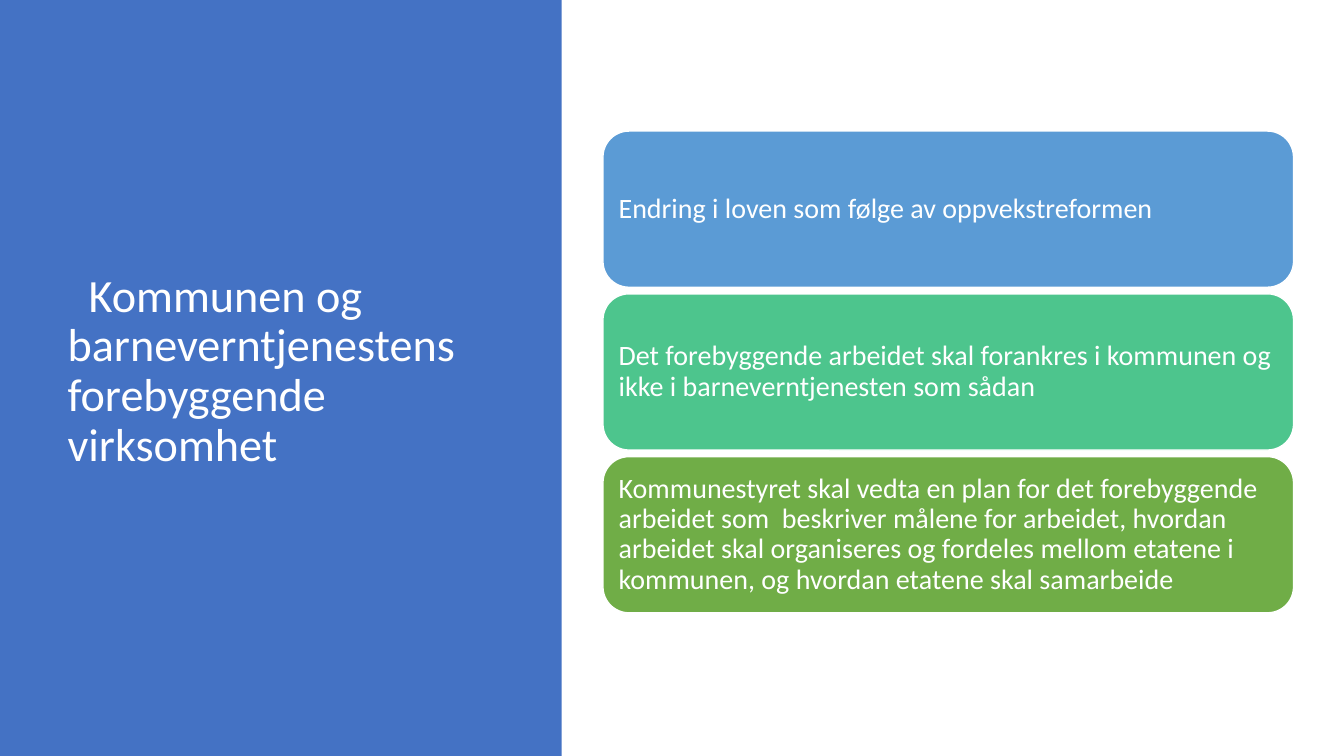
from pptx import Presentation
from pptx.dml.color import RGBColor
from pptx.enum.shapes import MSO_SHAPE
from pptx.enum.text import MSO_ANCHOR, MSO_AUTO_SIZE, PP_ALIGN
from pptx.util import Inches, Pt

WHITE = RGBColor(0xFF, 0xFF, 0xFF)
PANEL_BLUE = RGBColor(0x44, 0x72, 0xC4)
LIGHT_BLUE = RGBColor(0x5B, 0x9B, 0xD5)
TEAL = RGBColor(0x4D, 0xC5, 0x8D)
GREEN = RGBColor(0x70, 0xAD, 0x47)

CARD_LEFT, CARD_TOP = 5.98, 1.3
CARD_WIDTH, CARD_HEIGHT = 6.85, 1.55
CARD_PITCH = 1.615

CARDS = [
    (LIGHT_BLUE, "Endring i loven som følge av oppvekstreformen"),
    (TEAL, "Det forebyggende arbeidet skal forankres i kommunen og "
           "ikke i barneverntjenesten som sådan"),
    (GREEN, "Kommunestyret skal vedta en plan for det forebyggende "
            "arbeidet som  beskriver målene for arbeidet, hvordan "
            "arbeidet skal organiseres og fordeles mellom etatene i "
            "kommunen, og hvordan etatene skal samarbeide"),
]


def write_text(shape, text, size, inset_x, inset_y, indent=0):
    frame = shape.text_frame
    frame.word_wrap = True
    frame.auto_size = MSO_AUTO_SIZE.NONE
    frame.vertical_anchor = MSO_ANCHOR.MIDDLE
    frame.margin_left = frame.margin_right = Inches(inset_x)
    frame.margin_top = frame.margin_bottom = Inches(inset_y)
    paragraph = frame.paragraphs[0]
    paragraph.alignment = PP_ALIGN.LEFT
    paragraph.line_spacing = 0.9
    if indent:
        paragraph._p.get_or_add_pPr().set("indent", str(Inches(indent)))
    run = paragraph.add_run()
    run.text = text
    run.font.name = "Calibri"
    run.font.size = Pt(size)
    run.font.color.rgb = WHITE


prs = Presentation()
prs.slide_width, prs.slide_height = Inches(13.33), Inches(7.5)
slide = prs.slides.add_slide(prs.slide_layouts[5])

# Left panel, placed behind the title
title = slide.shapes.title
panel = slide.shapes.add_shape(
    MSO_SHAPE.RECTANGLE, 0, 0, Inches(5.57), prs.slide_height)
panel.shadow.inherit = False
panel.fill.solid()
panel.fill.fore_color.rgb = PANEL_BLUE
panel.line.fill.background()
title.element.addprevious(panel.element)

title.left, title.top = Inches(0.57), Inches(0.68)
title.width, title.height = Inches(4.16), Inches(6.02)
write_text(title, "Kommunen og barneverntjenestens forebyggende virksomhet",
           size=33, inset_x=0.1, inset_y=0.05, indent=0.21)

# Stacked cards
for row, (color, statement) in enumerate(CARDS):
    card = slide.shapes.add_shape(
        MSO_SHAPE.ROUNDED_RECTANGLE,
        Inches(CARD_LEFT), Inches(CARD_TOP + row * CARD_PITCH),
        Inches(CARD_WIDTH), Inches(CARD_HEIGHT))
    card.shadow.inherit = False
    card.fill.solid()
    card.fill.fore_color.rgb = color
    card.line.color.rgb = WHITE
    card.line.width = Pt(1)
    write_text(card, statement, size=20, inset_x=0.08, inset_y=0.08)

prs.save("out.pptx")
